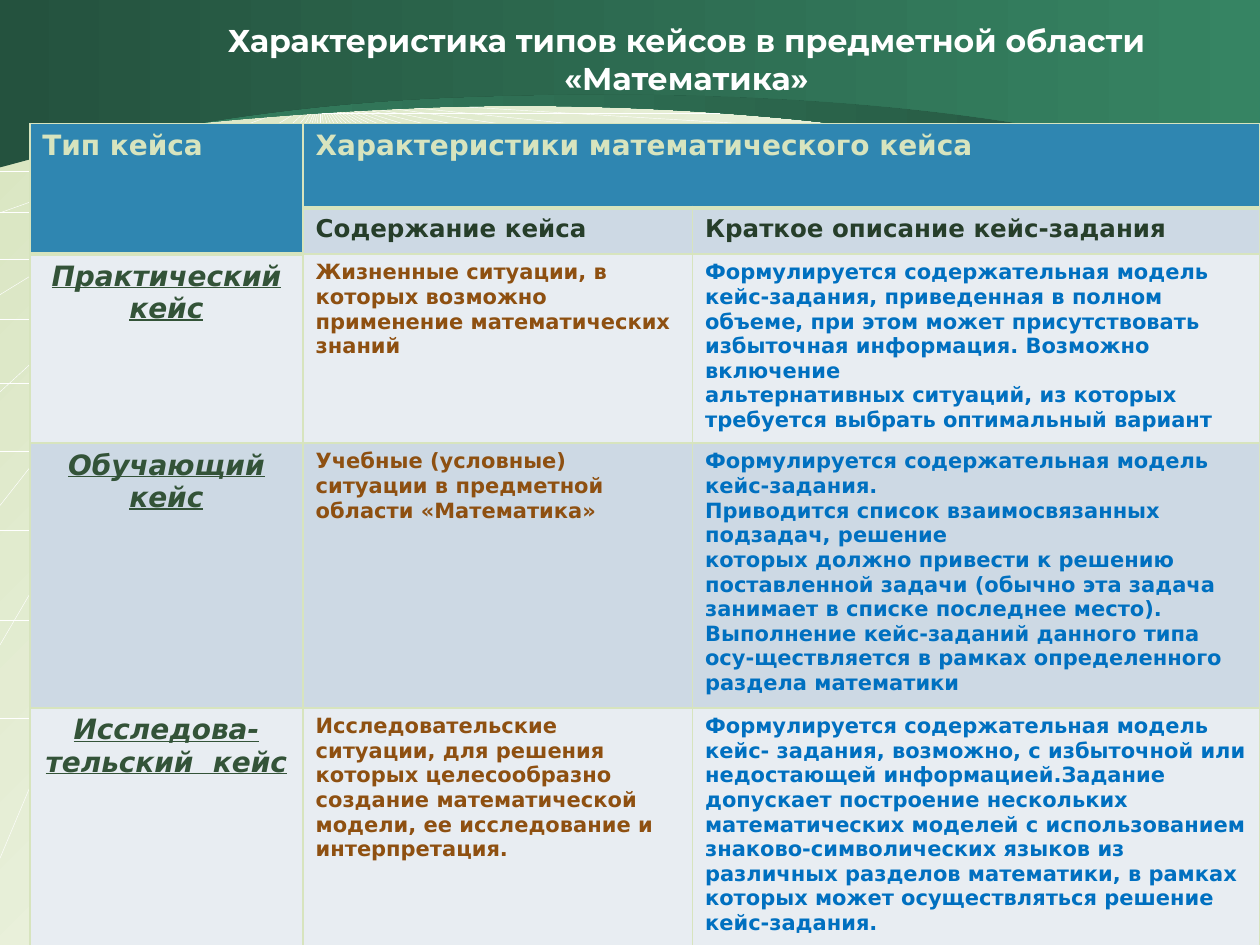
from lxml import etree
from pptx import Presentation
from pptx import util as u
from pptx.dml.color import RGBColor
from pptx.enum import shapes, text
from pptx.oxml import ns

COLORS = {
    "paper": "D7E4BE", "white": "FFFFFF", "green": "368463", "deep": "24523E",
    "header": "2F86B1", "band_dark": "CDD9E4", "band_light": "E8EDF2",
    "subheader": "263E2A", "case_type": "335338", "content": "8E5011",
    "task": "0070C0",
}
WIDTH, HEIGHT = 25.4, 19.05

# Perspective grid, in cm
VANISHING = (6.45, 1.98)
LEFT_ENDS = [1.98, 2.46, 2.95, 4.29, 5.94, 7.9, 10.19, 13, 17.3]
BOTTOM_ENDS = [1.07, 2.87, 4.67, 6.45, 8.71, 11.15, 13.56, 16, 18.75, 21.49, 24.38]
RIGHT_ENDS = [2.54, 3.12, 3.91, 4.67, 5.64, 6.63, 7.8, 8.97, 10.31, 11.66,
              13.21, 14.96, 17.27]
LEVELS = [2.13, 2.29, 2.5, 2.93, 3.45, 4.27, 5.23, 6.43, 7.72, 9.09, 10.69,
          12.5, 14.48]

# Lower edges of the header waves: two joined Bezier curves each
BACK_WAVE = [(-0.03, 3.02), (0.28, 3), (3.38, 2.36), (8.81, 2.16),
             (14.25, 1.98), (21.11, 2.69), (WIDTH, 4.45)]
FRONT_WAVE = [(-0.03, 3.38), (0.28, 3.33), (3.84, 2.16), (9.25, 1.96),
              (14.66, 1.75), (21.11, 2.06), (WIDTH, 3.73)]

COLUMNS = [5.51, 7.85, 11.44]
ROWS = [1.7, 0.84, 3.5, 5, 4.5]  # the case rows grow to fit their text
CASES = [
    ("Практический кейс",
     "Жизненные ситуации, в которых возможно применение математических знаний",
     "Формулируется содержательная модель кейс-задания, приведенная в полном "
     "объеме, при этом может присутствовать избыточная информация. Возможно "
     "включение\n"
     "альтернативных ситуаций, из которых требуется выбрать оптимальный вариант"),
    ("Обучающий кейс",
     "Учебные (условные) ситуации в предметной области «Математика»",
     "Формулируется содержательная модель кейс-задания.\n"
     "Приводится список взаимосвязанных подзадач, решение\n"
     "которых должно привести к решению поставленной задачи (обычно эта задача "
     "занимает в списке последнее место). Выполнение кейс-заданий данного типа "
     "осу-ществляется в рамках определенного раздела математики"),
    ("Исследова-тельский  кейс",
     "Исследовательские ситуации, для решения которых целесообразно создание "
     "математической модели, ее исследование и интерпретация.",
     "Формулируется содержательная модель кейс- задания, возможно, с избыточной "
     "или недостающей информацией.Задание допускает построение нескольких "
     "математических моделей с использованием знаково-символических языков из "
     "различных разделов математики, в рамках которых может осуществляться "
     "решение кейс-задания."),
]


def rgb(name):
    return RGBColor.from_string(COLORS[name])


def fill_gradient(fill, start, end, angle):
    fill.gradient()
    fill.gradient_angle = angle
    for stop, name, position in zip(fill.gradient_stops, (start, end), (0, 1)):
        stop.color.rgb = rgb(name)
        stop.position = position


def format_text(frame, size, color, font="DejaVu Sans", centered=False, accent=False):
    for paragraph in frame.paragraphs:
        if centered:
            paragraph.alignment = text.PP_ALIGN.CENTER
        for run in paragraph.runs:
            run.font.name = font
            run.font.size = u.Pt(size)
            run.font.bold = True
            run.font.italic = run.font.underline = accent
            run.font.color.rgb = rgb(color)


def add_grid_line(slide, start, end):
    line = slide.shapes.add_connector(
        shapes.MSO_CONNECTOR.STRAIGHT, *(u.Cm(value) for value in (*start, *end)))
    line.line.color.rgb = rgb("white")
    line.line.width = u.Pt(0.25)
    etree.SubElement(line._element.spPr, ns.qn("a:effectLst"))


def add_grid(slide):
    ends = [(0, y) for y in LEFT_ENDS]
    ends += [(x, HEIGHT) for x in BOTTOM_ENDS]
    ends += [(WIDTH, y) for y in RIGHT_ENDS]
    for end in ends:
        add_grid_line(slide, VANISHING, end)
    for y in LEVELS:
        add_grid_line(slide, (0, y), (WIDTH, y))


def bend_segments(freeform, curves):
    """Turn each leading triple of straight segments into one Bezier curve."""
    segments = list(freeform._element.iter(ns.qn("a:lnTo")))
    for first in range(0, curves * 3, 3):
        triple = segments[first:first + 3]
        curve = etree.Element(ns.qn("a:cubicBezTo"))
        triple[0].addprevious(curve)
        for segment in triple:
            curve.append(segment[0])
            segment.getparent().remove(segment)


def add_wave(slide, edge, start, end):
    left = edge[0][0]
    outline = [*edge[1:], (WIDTH, 0), (left, 0)]
    builder = slide.shapes.build_freeform(u.Cm(left), u.Cm(edge[0][1]))
    builder.add_line_segments([(u.Cm(x), u.Cm(y)) for x, y in outline], close=True)
    wave = builder.convert_to_shape()
    bend_segments(wave, 2)
    wave.shadow.inherit = False
    wave.line.fill.background()
    fill_gradient(wave.fill, start, end, 0)


def add_title(slide):
    title = slide.shapes.add_textbox(u.Cm(3.58), u.Cm(0.4), u.Cm(20.52), u.Cm(1.57))
    frame = title.text_frame
    frame.word_wrap = True
    frame.vertical_anchor = text.MSO_ANCHOR.MIDDLE
    frame.text = "Характеристика типов кейсов в предметной области «Математика»"
    format_text(frame, 18, "white", "Montserrat", centered=True)


def style_cell(cell, fill, bottom=1):
    properties = cell._tc.get_or_add_tcPr()
    for side, width in (("L", 1), ("R", 1), ("T", 1), ("B", bottom)):
        border = etree.SubElement(properties, ns.qn(f"a:ln{side}"), w=str(u.Pt(width)))
        solid = etree.SubElement(border, ns.qn("a:solidFill"))
        etree.SubElement(solid, ns.qn("a:srgbClr"), val=COLORS["paper"])
    cell.fill.solid()
    cell.fill.fore_color.rgb = rgb(fill)


def write_cell(cell, content, size, color, **style):
    cell.text_frame.text = content
    format_text(cell.text_frame, size, color, **style)


def add_case_table(slide):
    table = slide.shapes.add_table(
        len(ROWS), len(COLUMNS), u.Cm(0.6), u.Cm(2.49),
        u.Cm(sum(COLUMNS)), u.Cm(sum(ROWS))).table
    for column, width in zip(table.columns, COLUMNS):
        column.width = u.Cm(width)
    for row, height in zip(table.rows, ROWS):
        row.height = u.Cm(height)

    # Fills and borders
    for r in range(len(ROWS)):
        for c in range(len(COLUMNS)):
            if r == 0 or (r, c) == (1, 0):
                style_cell(table.cell(r, c), "header", bottom=3)
            else:
                style_cell(table.cell(r, c), "band_dark" if r % 2 else "band_light")

    # Two-level header
    table.cell(0, 0).merge(table.cell(1, 0))
    table.cell(0, 1).merge(table.cell(0, 2))
    write_cell(table.cell(0, 0), "Тип кейса", 16, "paper")
    write_cell(table.cell(0, 1), "Характеристики математического кейса", 16, "paper")
    write_cell(table.cell(1, 1), "Содержание кейса", 14, "subheader")
    write_cell(table.cell(1, 2), "Краткое описание кейс-задания", 14, "subheader")

    # One row for each type of case
    for r, (case_type, content, task) in enumerate(CASES, start=2):
        write_cell(table.cell(r, 0), case_type, 16, "case_type",
                   centered=True, accent=True)
        write_cell(table.cell(r, 1), content, 12, "content")
        write_cell(table.cell(r, 2), task, 12, "task")


def main():
    deck = Presentation()
    deck.slide_width, deck.slide_height = u.Cm(WIDTH), u.Cm(HEIGHT)
    slide = deck.slides.add_slide(deck.slide_layouts[6])

    # Backdrop
    fill_gradient(slide.background.fill, "paper", "white", 315)
    add_grid(slide)
    add_wave(slide, BACK_WAVE, "green", "deep")
    add_wave(slide, FRONT_WAVE, "deep", "green")

    # Content
    add_title(slide)
    add_case_table(slide)
    deck.save("out.pptx")


if __name__ == "__main__":
    main()
